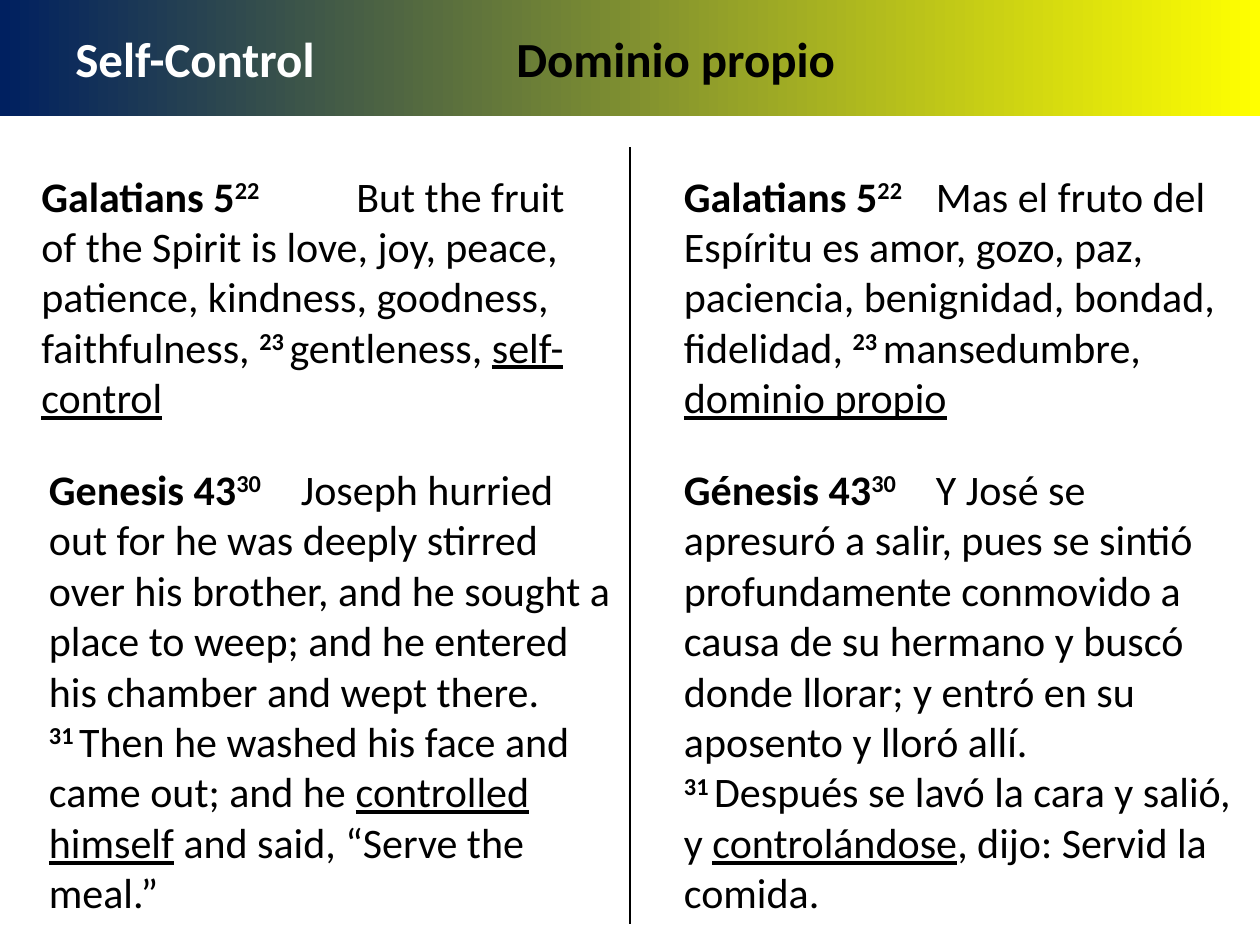
from pptx import Presentation, util as u
from pptx.dml.color import RGBColor
from pptx.enum import shapes, text
from pptx.oxml import parse_xml
from pptx.oxml.ns import nsdecls

FONT = "Calibri"
NAVY, GOLD, WHITE, BLACK = "002060", "FFFF00", "FFFFFF", "000000"

# Content: each run is (style, words)
# b = bold, s = bold superscript, n = normal, u = underlined
TITLE = [(WHITE, "\tSelf-Control\t\t\t\t"), (BLACK, "Dominio propio")]

VERSES = [  # (left, top, width, height), paragraphs
    ((0.23, 1.3, 4.36, 2.12), [
        [("b", "Galatians 5"), ("s", "22 \t\t"),
         ("n", "But the fruit of the Spirit is love, joy, peace, patience, "
               "kindness, goodness, faithfulness, "),
         ("s", "23 "), ("n", "gentleness, "), ("u", "self-control")]]),
    ((5.33, 1.3, 4.5, 2.12), [
        [("b", "Galatians 5"), ("s", "22 \t"),
         ("n", "Mas el fruto del Espíritu es amor, gozo, paz, paciencia, "
               "benignidad, bondad, fidelidad, "),
         ("s", "23 "), ("n", "mansedumbre, "), ("u", "dominio propio")]]),
    ((5.33, 3.63, 4.55, 3.74), [
        [("b", "Génesis 43"), ("s", "30 \t"),
         ("n", "Y José se apresuró a salir, pues se sintió profundamente "
               "conmovido a causa de su hermano y buscó donde llorar; "
               "y entró en su aposento y lloró allí.")],
        [("s", "31 "), ("n", "Después se lavó la cara y salió, y "),
         ("u", "controlándose"), ("n", ", dijo: Servid la comida.")]]),
    ((0.29, 3.63, 4.71, 3.74), [
        [("b", "Genesis 43"), ("s", "30\t"),
         ("n", "Joseph hurried out for he was deeply stirred over his "
               "brother, and he sought a place to weep; and he entered "
               "his chamber and wept there.")],
        [("s", "31 "), ("n", "Then he washed his face and came out; and he "),
         ("u", "controlled himself"), ("n", " and said, “Serve the meal.”")]]),
]


def color(code):
    return RGBColor.from_string(code)


def add_run(para, words, size, code, bold):
    run = para.add_run()
    run.text = words
    font = run.font
    font.name, font.size, font.bold = FONT, u.Pt(size), bold
    font.color.rgb = color(code)
    return run


def add_verse(slide, place, paras):
    frame = slide.shapes.add_textbox(*map(u.Inches, place)).text_frame
    frame.word_wrap = True
    frame.auto_size = text.MSO_AUTO_SIZE.SHAPE_TO_FIT_TEXT
    for i, runs in enumerate(paras):
        para = frame.add_paragraph() if i else frame.paragraphs[0]
        for style, words in runs:
            run = add_run(para, words, 24, BLACK, style in "bs")
            if style == "u":
                run.font.underline = True
            elif style == "s":
                run._r.get_or_add_rPr().set("baseline", "30000")


deck = Presentation()
deck.slide_width, deck.slide_height = u.Inches(10), u.Inches(7.5)
slide = deck.slides.add_slide(deck.slide_layouts[6])

# Title band
band = slide.shapes.add_shape(
    shapes.MSO_SHAPE.RECTANGLE, 0, 0, deck.slide_width, u.Inches(0.92))
band.shadow.inherit = False
band.line.fill.background()
band.fill.gradient()
band.fill.gradient_angle = 0
for stop, pos, code in zip(band.fill.gradient_stops, (0, 1), (NAVY, GOLD)):
    stop.position, stop.color.rgb = pos, color(code)
band.text_frame.vertical_anchor = text.MSO_ANCHOR.MIDDLE
head = band.text_frame.paragraphs[0]
head.alignment = text.PP_ALIGN.LEFT
for code, words in TITLE:
    add_run(head, words, 28, code, True)

# Divider between the languages
rule = slide.shapes.add_connector(
    shapes.MSO_CONNECTOR.STRAIGHT, *map(u.Inches, (5, 1.17, 5, 7.33)))
rule.line.color.rgb = color(BLACK)
rule.line.width = u.Pt(1)
rule._element.spPr.append(parse_xml(f"<a:effectLst {nsdecls('a')}/>"))

# Verses
for place, paras in VERSES:
    add_verse(slide, place, paras)

deck.save("out.pptx")
